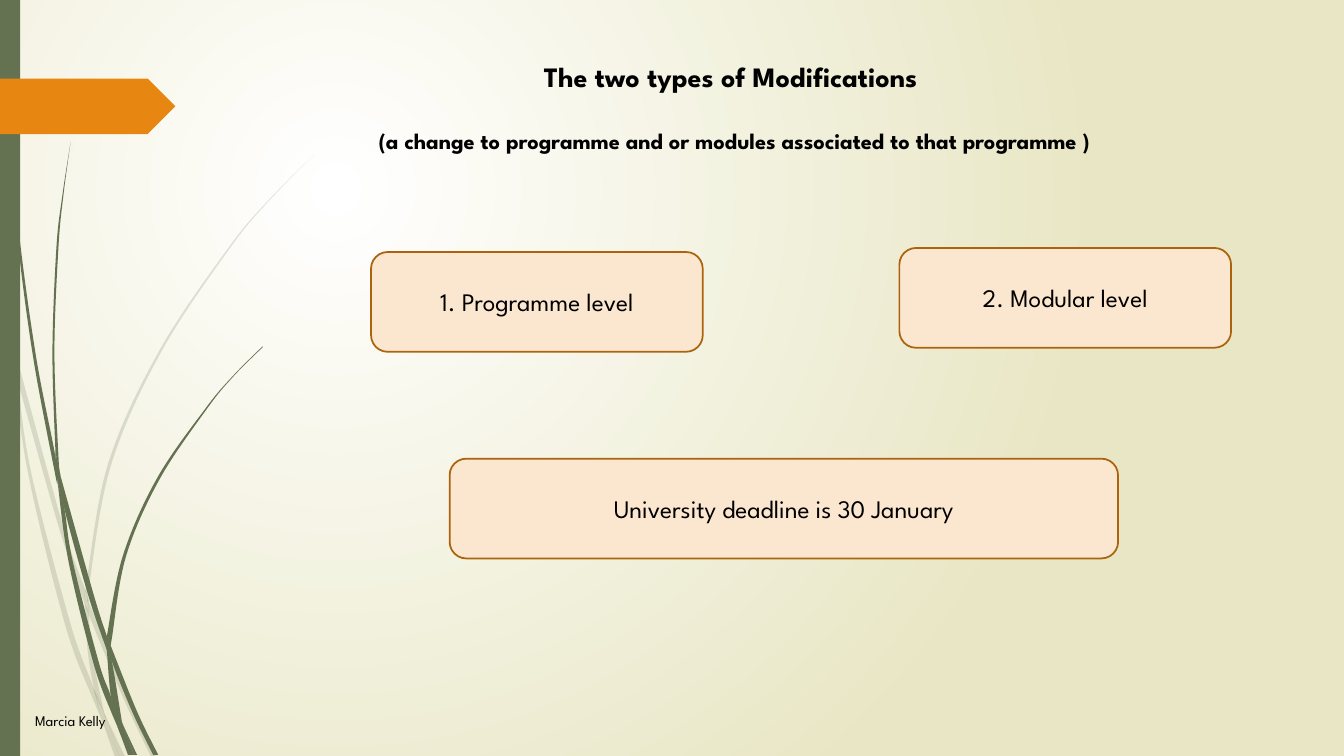
import lxml.etree
import pptx
import pptx.util
import pptx.dml.color
import pptx.enum.shapes
import pptx.enum.text
import pptx.oxml.ns

Inches = pptx.util.Inches
Pt = pptx.util.Pt
RGBColor = pptx.dml.color.RGBColor
SHAPE = pptx.enum.shapes.MSO_SHAPE
ALIGN = pptx.enum.text.PP_ALIGN
ANCHOR = pptx.enum.text.MSO_ANCHOR
qn = pptx.oxml.ns.qn

FONT = "League Spartan"
WHITE = RGBColor(0xFF, 0xFF, 0xFF)
BLACK = RGBColor(0, 0, 0)
SAND = RGBColor(0xE8, 0xE6, 0xC4)
GREEN = RGBColor(0x64, 0x72, 0x52)
ORANGE = RGBColor(0xE7, 0x87, 0x12)
PEACH = RGBColor(0xFB, 0xE7, 0xCF)
BROWN = RGBColor(0xAB, 0x64, 0x0D)

# Grass blades: one edge downwards, then the other edge upwards
PALE = [
    ([(0, 2.82), (0.09, 3.22), (0.11, 3.5)], [(0.1, 3.44), (0, 2.99)]),
    ([(0.14, 3.45), (0.62, 5.2), (0.85, 5.86)],
     [(0.84, 5.99), (0.58, 5.22), (0.17, 3.76)]),
    ([(0.88, 5.96), (0.92, 6.07), (1.27, 6.92), (1.55, 7.51)],
     [(1.5, 7.51), (1.23, 6.94), (0.88, 6.1)]),
    ([(1.05, 7.11), (1.24, 7.51)], [(1.19, 7.51), (1.05, 7.11)]),
    ([(0.11, 3.5), (0.17, 3.76), (0.31, 4.69), (0.7, 6.19), (0.93, 6.83),
      (0.99, 7.07), (1.01, 7.14)],
     [(0.92, 6.93), (0.65, 6.21), (0.28, 4.7), (0.11, 3.5)]),
    ([(0.84, 5.99), (0.88, 6.1), (0.91, 6.46), (1.03, 7.06), (1.05, 7.11)],
     [(0.96, 6.92), (0.93, 6.83), (0.87, 6.46), (0.84, 5.99)]),
    ([(3.12, 1.53), (2.68, 1.98), (2.29, 2.45), (1.6, 3.49), (1.1, 4.62),
      (0.88, 5.84), (0.88, 5.96)],
     [(0.85, 5.86), (0.85, 5.84), (1.07, 4.61), (1.58, 3.48), (2.28, 2.44),
      (2.68, 1.97), (3.12, 1.53)]),
    ([(1.01, 7.14), (1.19, 7.51)], [(1.14, 7.51), (1.01, 7.14)]),
    ([(0.85, 5.86), (0.88, 5.96), (0.88, 6.1)], [(0.84, 5.99), (0.85, 5.86)]),
    ([(0.93, 6.83), (1.05, 7.11), (1.19, 7.51)],
     [(1.01, 7.14), (0.99, 7.07), (0.93, 6.83)]),
]
DARK = [
    ([(0.04, 0), (0.05, 0.48), (0.08, 1.09), (0.19, 2.32), (0.36, 3.55),
      (0.55, 4.53), (0.57, 4.81)],
     [(0.56, 4.77), (0.33, 3.55), (0.17, 2.33), (0.07, 1.1), (0.03, 0)]),
    ([(0.6, 4.72), (0.93, 5.9), (1.06, 6.31)],
     [(1.06, 6.45), (0.88, 5.92), (0.64, 5.05), (0.6, 4.72)]),
    ([(1.1, 6.41), (1.36, 7.06), (1.57, 7.49)],
     [(1.52, 7.49), (1.32, 7.08), (1.11, 6.56), (1.1, 6.41)]),
    ([(0.57, 4.77), (0.64, 5.05), (0.72, 5.56), (0.98, 6.57), (1.1, 6.91),
      (1.17, 7.22)],
     [(1.11, 7.08), (0.93, 6.59), (0.68, 5.57), (0.57, 4.77)]),
    ([(0.7, 1.41), (0.63, 1.93), (0.58, 2.45), (0.54, 3.49), (0.58, 4.53),
      (0.6, 4.72)],
     [(0.55, 4.49), (0.52, 3.49), (0.56, 2.45), (0.62, 1.93), (0.7, 1.41)]),
    ([(1.22, 7.19), (1.36, 7.49)], [(1.33, 7.49), (1.22, 7.19)]),
    ([(0.55, 4.49), (0.6, 4.72), (0.64, 5.05)],
     [(0.57, 4.77), (0.55, 4.53), (0.55, 4.49)]),
    ([(2.61, 3.44), (2.31, 3.74), (2.05, 4.06), (1.58, 4.76), (1.25, 5.52),
      (1.11, 6.33), (1.1, 6.41)],
     [(1.06, 6.31), (1.22, 5.51), (1.56, 4.74), (2.04, 4.05), (2.31, 3.73),
      (2.6, 3.44)]),
    ([(1.17, 7.22), (1.31, 7.49)], [(1.27, 7.49), (1.17, 7.22)]),
    ([(1.06, 6.45), (1.11, 6.56), (1.21, 7.16), (1.22, 7.19)],
     [(1.16, 7.06), (1.1, 6.91), (1.06, 6.45)]),
    ([(1.06, 6.31), (1.1, 6.41), (1.11, 6.56)], [(1.06, 6.45), (1.06, 6.31)]),
    ([(1.1, 6.91), (1.22, 7.19), (1.33, 7.49)],
     [(1.3, 7.49), (1.17, 7.22), (1.1, 6.91)]),
]


def paint(shape, fill, line=None, alpha=None):
    shape.shadow.inherit = False
    shape.fill.solid()
    shape.fill.fore_color.rgb = fill
    if alpha:
        color = shape.element.spPr.find(".//" + qn("a:srgbClr"))
        lxml.etree.SubElement(color, qn("a:alpha"), val=str(alpha * 1000))
    if line:
        shape.line.color.rgb = line
        shape.line.width = Pt(1.25)
    else:
        shape.line.fill.background()


def add_back(slide):
    fill = slide.background.fill
    fill.gradient()
    for stop, color in zip(fill.gradient_stops, (WHITE, SAND)):
        stop.color.rgb = color
    grad = slide.element.find(".//" + qn("a:gradFill"))
    grad.remove(grad.find(qn("a:lin")))
    ring = lxml.etree.SubElement(grad, qn("a:path"), {"path": "circle"})
    lxml.etree.SubElement(ring, qn("a:fillToRect"),
                          l="50000", t="50000", r="100000", b="100000")


def bend(shape, edge, lines):
    """Turn the straight steps along an edge into smooth curves."""
    ends = [edge[0]] + edge + [edge[-1]]
    for a, b, c, d, line in zip(ends, ends[1:], ends[2:], ends[3:], lines):
        curve = lxml.etree.Element(qn("a:cubicBezTo"))
        first = [q + (r - p) / 6 for p, q, r in zip(a, b, c)]
        second = [r - (s - q) / 6 for q, r, s in zip(b, c, d)]
        for x, y in (first, second, c):
            lxml.etree.SubElement(curve, qn("a:pt"),
                                  x=str(round(x - shape.left)),
                                  y=str(round(y - shape.top)))
        line.getparent().replace(line, curve)


def add_blade(slide, edges, alpha=None):
    down, up = [[(Inches(x), Inches(y)) for x, y in edge] for edge in edges]
    pen = slide.shapes.build_freeform(*down[0])
    pen.add_line_segments(down[1:] + up, close=True)
    blade = pen.convert_to_shape()
    lines = blade.element.findall(".//" + qn("a:lnTo"))
    bend(blade, down, lines)
    bend(blade, up, lines[len(down):])
    paint(blade, GREEN, alpha=alpha)


def add_form(slide, kind, box, fill, line=None):
    shape = slide.shapes.add_shape(kind, *map(Inches, box))
    paint(shape, fill, line)
    return shape


def style(para, size, bold=False, align=ALIGN.LEFT):
    para.alignment = align
    for run in para.runs:
        run.font.name = FONT
        run.font.size = Pt(size)
        run.font.bold = bold
        run.font.color.rgb = BLACK


def add_card(slide, text, box):
    card = add_form(slide, SHAPE.ROUNDED_RECTANGLE, box, PEACH, BROWN)
    frame = card.text_frame
    frame.text = text
    frame.vertical_anchor = ANCHOR.MIDDLE
    style(frame.paragraphs[0], 18, align=ALIGN.CENTER)


def add_text(slide, text, box):
    frame = slide.shapes.add_textbox(*map(Inches, box)).text_frame
    frame.word_wrap = True
    frame.text = text
    return frame.paragraphs


def main():
    deck = pptx.Presentation()
    deck.slide_width = Inches(13.33)
    deck.slide_height = Inches(7.5)
    slide = deck.slides.add_slide(deck.slide_layouts[6])

    # Backdrop with grass, side bar and arrow tab
    add_back(slide)
    for edges in PALE:
        add_blade(slide, edges, alpha=20)
    for edges in DARK:
        add_blade(slide, edges)
    add_form(slide, SHAPE.RECTANGLE, (0, 0, 0.2, 7.5), GREEN)
    add_form(slide, SHAPE.PENTAGON, (0, 0.78, 1.74, 0.55), ORANGE)

    # Heading
    title, note = add_text(
        slide,
        "The two types of Modifications \n"
        "(a change to programme and or modules associated to that programme )",
        (1.81, 0.54, 10.95, 1.38))
    style(title, 20, True, ALIGN.CENTER)
    style(note, 16, True, ALIGN.CENTER)
    note.space_before = Pt(24)

    # Cards
    add_card(slide, "1. Programme level", (3.68, 2.5, 3.29, 0.99))
    add_card(slide, "2. Modular level", (8.92, 2.46, 3.29, 0.99))
    add_card(slide, "University deadline is 30 January",
             (4.46, 4.55, 6.63, 0.99))

    # Footer
    style(add_text(slide, "Marcia Kelly", (0.25, 7.01, 3, 0.28))[0], 10.5)

    deck.save("out.pptx")


if __name__ == "__main__":
    main()
